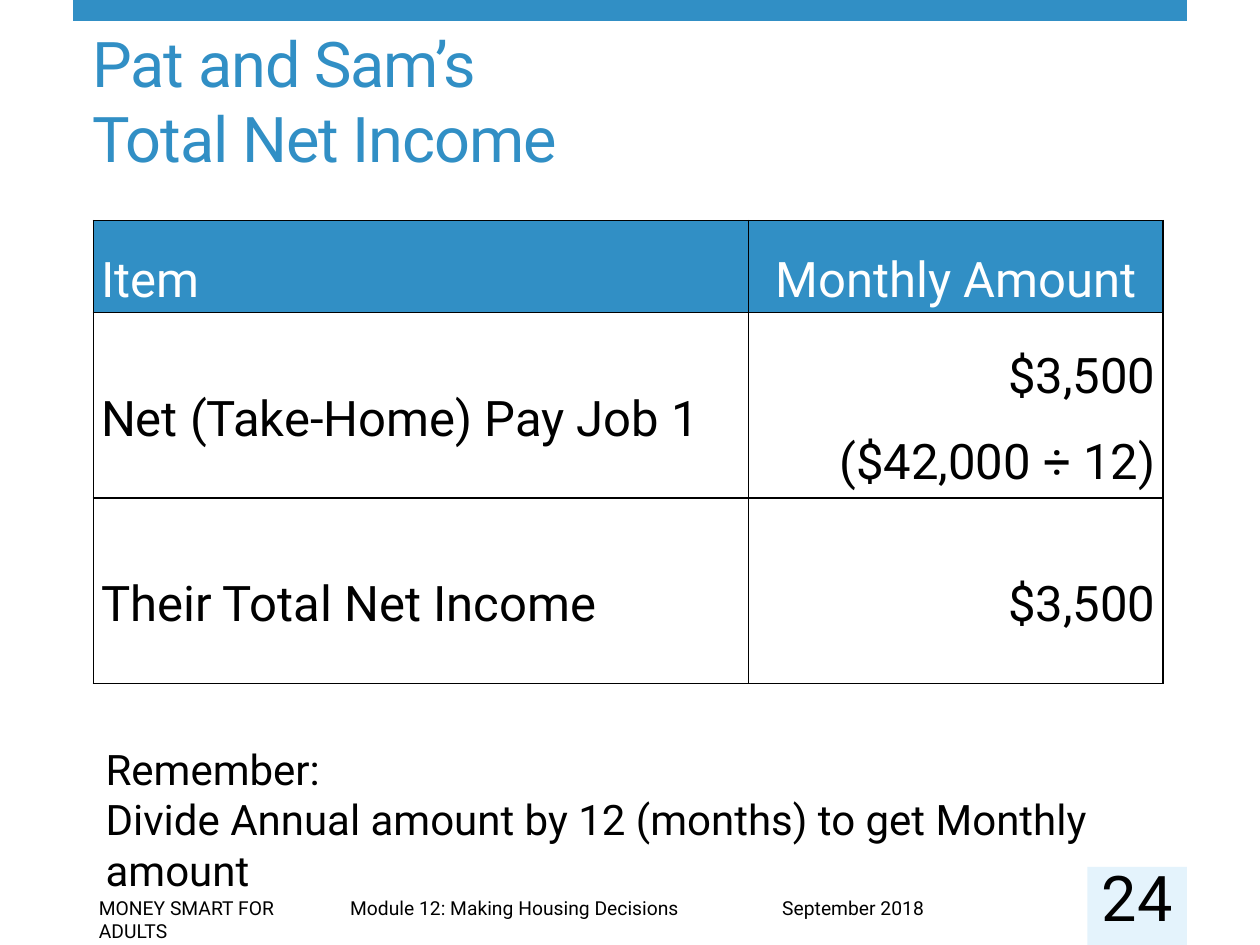
"""Build the slide showing Pat and Sam's total net income."""
import dataclasses
import typing

import lxml.etree
import pptx
import pptx.dml.color
import pptx.enum.shapes
import pptx.enum.text
import pptx.oxml.ns
import pptx.util

Pt = pptx.util.Pt
Align = pptx.enum.text.PP_ALIGN
Anchor = pptx.enum.text.MSO_ANCHOR


@dataclasses.dataclass(frozen=True)
class Theme:
    font: str = "Roboto"
    blue: str = "318FC5"
    pale: str = "E4F3FC"
    black: str = "000000"
    white: str = "FFFFFF"
    heading_size: float = 36
    table_size: float = 28
    note_size: float = 24
    footer_size: float = 11


THEME = Theme()


class Box(typing.NamedTuple):
    left: float
    top: float
    width: float
    height: float

    def lengths(self) -> list:
        return [Pt(value) for value in self]


@dataclasses.dataclass(frozen=True)
class Label:
    text: str
    box: Box
    size: float
    color: str = THEME.black
    align: Align = Align.LEFT
    anchor: Anchor = Anchor.TOP
    inset: tuple[float, float] = (7.2, 3.6)
    tracking: float = 0


@dataclasses.dataclass(frozen=True)
class Panel:
    box: Box
    color: str


PANELS = [
    Panel(Box(41.76, 0, 636.48, 12), THEME.blue),
    Panel(Box(621.36, 495.36, 56.88, 44.64), THEME.pale),
]
LABELS = [
    Label("MONEY SMART FOR ADULTS", Box(49.4, 508.4, 150.5, 21), THEME.footer_size),
    Label("Module 12: Making Housing Decisions", Box(193, 508.4, 407.5, 21), THEME.footer_size),
    Label("September 2018", Box(439.9, 508.4, 181.4, 21), THEME.footer_size),
    Label("Pat and Sam’s\vTotal Net Income", Box(45.7, 34.6, 590.4, 69.1),
          THEME.heading_size, THEME.blue, anchor=Anchor.BOTTOM, tracking=-0.6),
    Label("Remember:\vDivide Annual amount by 12 (months) to get Monthly amount",
          Box(53.3, 421.2, 650.9, 65.5), THEME.note_size),
    Label("24", Box(621.36, 501.1, 56.88, 22.3), THEME.heading_size,
          align=Align.CENTER, anchor=Anchor.MIDDLE, inset=(0, 0)),
]
TABLE_BOX = Box(53.3, 126, 611.3, 264.6)
COLUMN_WIDTHS = [374.4, 236.9]
ROW_HEIGHTS = [52.6, 106, 106]
ROWS = [
    ("Item", "Monthly Amount"),
    ("Net (Take-Home) Pay Job 1", "$3,500\v($42,000 ÷ 12)"),
    ("Their Total Net Income", "$3,500"),
]


def rgb(color: str) -> pptx.dml.color.RGBColor:
    return pptx.dml.color.RGBColor.from_string(color)


def format_runs(paragraph, size: float, color: str, tracking: float = 0) -> None:
    for run in paragraph.runs:
        run.font.name = THEME.font
        run.font.size = Pt(size)
        run.font.color.rgb = rgb(color)
        if tracking:
            run.font._element.set("spc", str(round(tracking * 100)))


def draw_panel(slide, panel: Panel) -> None:
    rectangle = pptx.enum.shapes.MSO_SHAPE.RECTANGLE
    shape = slide.shapes.add_shape(rectangle, *panel.box.lengths())
    shape.shadow.inherit = False
    shape.fill.solid()
    shape.fill.fore_color.rgb = rgb(panel.color)
    shape.line.fill.background()


def draw_label(slide, label: Label) -> None:
    text_frame = slide.shapes.add_textbox(*label.box.lengths()).text_frame
    text_frame.word_wrap = True
    text_frame.vertical_anchor = label.anchor
    horizontal, vertical = label.inset
    text_frame.margin_left = text_frame.margin_right = Pt(horizontal)
    text_frame.margin_top = text_frame.margin_bottom = Pt(vertical)
    paragraph = text_frame.paragraphs[0]
    paragraph.text = label.text.replace("\n", "\v")
    paragraph.alignment = label.align
    format_runs(paragraph, label.size, label.color, label.tracking)


def add_borders(cell) -> None:
    qualified = pptx.oxml.ns.qn
    properties = cell._tc.get_or_add_tcPr()
    for position, side in enumerate(("lnL", "lnR", "lnT", "lnB")):
        line = lxml.etree.Element(qualified(f"a:{side}"), w=str(Pt(1)))
        fill = lxml.etree.SubElement(line, qualified("a:solidFill"))
        lxml.etree.SubElement(fill, qualified("a:srgbClr"), val=THEME.black)
        properties.insert(position, line)


def format_cell(cell, text: str, is_header: bool, align: Align) -> None:
    cell.vertical_anchor = Anchor.MIDDLE
    cell.margin_left = cell.margin_right = Pt(4.5)
    cell.margin_top = cell.margin_bottom = Pt(0)
    if is_header:
        cell.fill.solid()
        cell.fill.fore_color.rgb = rgb(THEME.blue)
    else:
        cell.fill.background()
    add_borders(cell)
    paragraph = cell.text_frame.paragraphs[0]
    paragraph.text = text
    paragraph.alignment = align
    paragraph.line_spacing = 1.5
    paragraph.space_after = Pt(12)
    format_runs(paragraph, THEME.table_size, THEME.white if is_header else THEME.black)


def draw_income_table(slide) -> None:
    frame = slide.shapes.add_table(len(ROWS), len(COLUMN_WIDTHS), *TABLE_BOX.lengths())
    table = frame.table
    table.first_row = table.horz_banding = False
    for column, width in zip(table.columns, COLUMN_WIDTHS):
        column.width = Pt(width)
    for row, height in zip(table.rows, ROW_HEIGHTS):
        row.height = Pt(height)
    for row_index, (item, amount) in enumerate(ROWS):
        is_header = row_index == 0
        amount_align = Align.CENTER if is_header else Align.RIGHT
        format_cell(table.cell(row_index, 0), item, is_header, Align.LEFT)
        format_cell(table.cell(row_index, 1), amount, is_header, amount_align)


def main() -> None:
    presentation = pptx.Presentation()
    presentation.slide_width = Pt(720)
    presentation.slide_height = Pt(540)
    slide = presentation.slides.add_slide(presentation.slide_layouts[6])
    for panel in PANELS:
        draw_panel(slide, panel)
    draw_income_table(slide)
    for label in LABELS:
        draw_label(slide, label)
    presentation.save("out.pptx")


if __name__ == "__main__":
    main()
